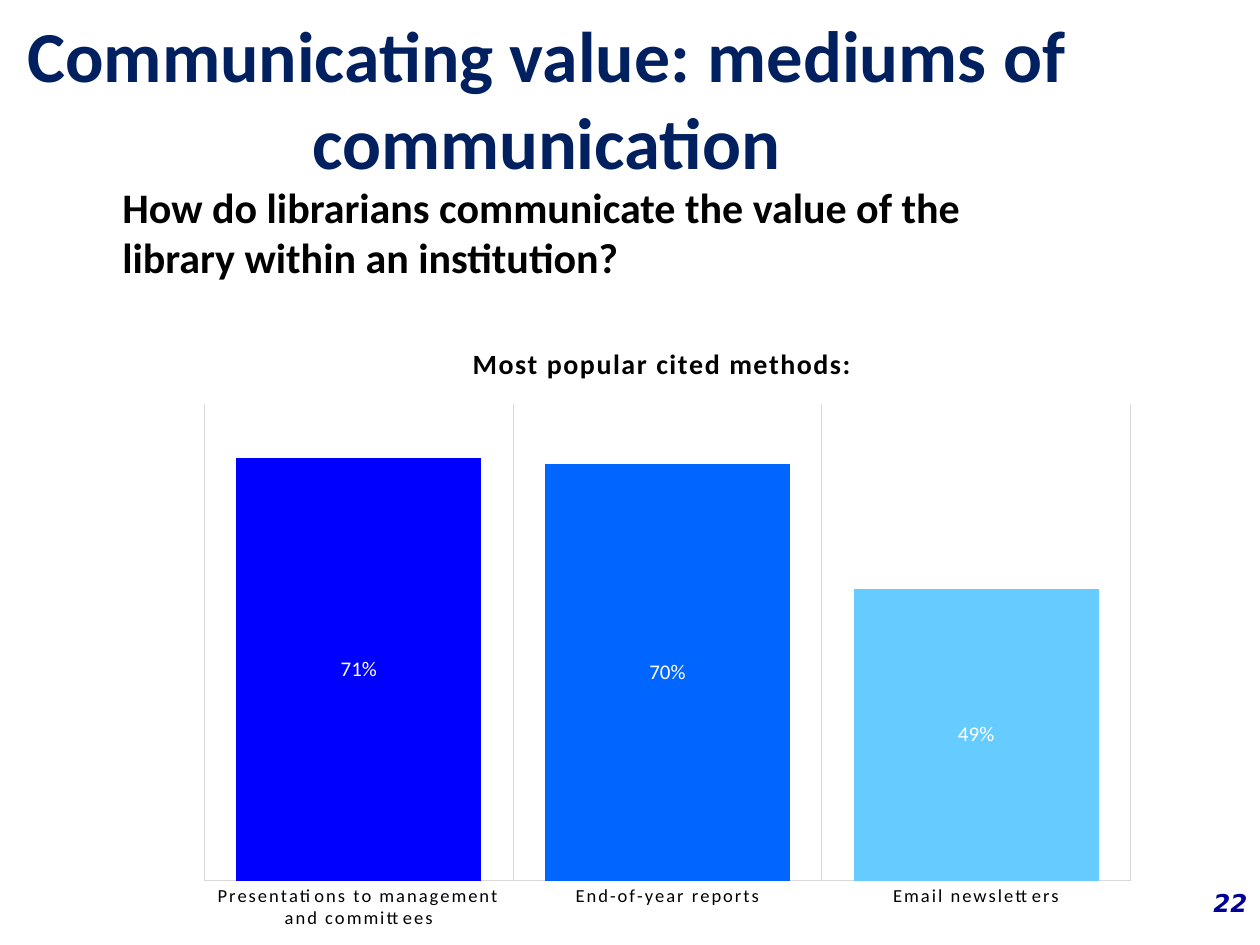
from dataclasses import dataclass

from lxml import etree
from pptx import Presentation
from pptx.chart.data import CategoryChartData
from pptx.dml.color import RGBColor
from pptx.enum import chart as ch, text as tx
from pptx.oxml.ns import qn
from pptx.util import Emu, Pt

NAVY = RGBColor(0x00, 0x20, 0x60)
INDIGO = RGBColor(0x00, 0x00, 0x99)
BLACK = RGBColor(0x00, 0x00, 0x00)
WHITE = RGBColor(0xFF, 0xFF, 0xFF)
GREY = RGBColor(0xD9, 0xD9, 0xD9)
BLUE = RGBColor(0x00, 0x00, 0xFF)
AZURE = RGBColor(0x00, 0x66, 0xFF)
SKY = RGBColor(0x66, 0xCC, 0xFF)
TEAL = RGBColor(0x00, 0xCC, 0x99)


@dataclass
class Label:
    box: tuple[int, int, int, int]
    runs: list[tuple[str, float]]
    color: RGBColor
    font: str = "Calibri"
    align: tx.PP_ALIGN = tx.PP_ALIGN.LEFT
    anchor: tx.MSO_ANCHOR = tx.MSO_ANCHOR.TOP
    italic: bool = False


@dataclass
class Bar:
    name: str
    value: float
    color: RGBColor


LABELS = [
    Label((1186, 882, 74, 63), [("22", 14)], INDIGO, "DejaVu Sans",
          tx.PP_ALIGN.RIGHT, italic=True),
    Label((-54, 33, 1201, 128),
          [("Communicating value: ", 41), ("mediums of communication", 41.5)],
          NAVY, align=tx.PP_ALIGN.CENTER, anchor=tx.MSO_ANCHOR.MIDDLE),
    Label((110, 175, 963, 115),
          [("How do librarians communicate the value of the library "
            "within an institution?", 24)], BLACK),
]
BARS = [
    Bar("Presentations to management and committees", 0.71, BLUE),
    Bar("End-of-year reports", 0.70, AZURE),
    Bar("Email newsletters", 0.49, SKY),
]


def px(n: int) -> Emu:
    return Emu(round(n * 914400 / 126))


def style(font, size: float, color: RGBColor, bold: bool = False) -> None:
    font.name = "Calibri"
    font.size = Pt(size)
    font.bold = bold
    font.color.rgb = color


def add_label(slide, label: Label) -> None:
    frame = slide.shapes.add_textbox(*map(px, label.box)).text_frame
    frame.word_wrap = True
    frame.vertical_anchor = label.anchor
    para = frame.paragraphs[0]
    para.alignment = label.align
    style(para.font, label.runs[0][1], label.color, True)
    para.font.name = label.font
    para.font.italic = label.italic
    for words, size in label.runs:
        run = para.add_run()
        run.text = words
        run.font.size = Pt(size)


def place(parent, index: int, **sides: float) -> None:
    """Give a chart part a manual layout, as fractions of the chart."""
    for old in parent.findall(qn("c:layout")):
        parent.remove(old)
    layout = etree.Element(qn("c:layout"))
    manual = etree.SubElement(layout, qn("c:manualLayout"))
    if "w" in sides:
        etree.SubElement(manual, qn("c:layoutTarget")).set("val", "inner")
    for side in "xy":
        etree.SubElement(manual, qn(f"c:{side}Mode")).set("val", "edge")
    for side, value in sides.items():
        etree.SubElement(manual, qn(f"c:{side}")).set("val", str(value))
    parent.insert(index, layout)


def space_out(props, spacing: int) -> None:
    """Set letter spacing in hundredths of a point."""
    props.set("spc", str(spacing))


def add_bars(slide, bars: list[Bar]) -> None:
    data = CategoryChartData(number_format="0%")
    data.categories = [bar.name for bar in bars]
    data.add_series("Series 1", [bar.value for bar in bars])
    chart = slide.shapes.add_chart(
        ch.XL_CHART_TYPE.COLUMN_STACKED,
        *map(px, (154, 316, 1012, 614)), data).chart
    style(chart.font, 10, BLACK)
    chart.has_legend = False

    chart.has_title = True
    title = chart.chart_title
    para = title.text_frame.paragraphs[0]
    run = para.add_run()
    run.text = "Most popular cited methods:"
    style(run.font, 16, BLACK, True)
    space_out(run._r.get_or_add_rPr(), 100)
    title.include_in_layout = False
    place(title._element, 1, x=0.31, y=0.04)
    place(chart._chartSpace.chart.plotArea, 0, x=0.05, y=0.145, w=0.915, h=0.78)

    cats = chart.category_axis
    cats.major_tick_mark = ch.XL_TICK_MARK.NONE
    cats.has_major_gridlines = True
    for line in (cats.format.line, cats.major_gridlines.format.line):
        line.color.rgb = GREY
        line.width = Pt(0.75)
    style(cats.tick_labels.font, 10.6, BLACK)
    space_out(cats.tick_labels.font._element, 120)

    axis = chart.value_axis
    axis.minimum_scale, axis.maximum_scale = 0, 0.8
    axis.has_major_gridlines = False
    axis.tick_labels.number_format = "0%"
    axis.tick_labels.number_format_is_linked = False
    axis.visible = False

    plot = chart.plots[0]
    plot.gap_width, plot.overlap = 26, 100
    plot.vary_by_categories = False
    series = plot.series[0]
    series.format.fill.solid()
    series.format.fill.fore_color.rgb = TEAL
    for i, bar in enumerate(bars):
        fill = series.points[i].format.fill
        fill.solid()
        fill.fore_color.rgb = bar.color
    marks = series.data_labels
    marks.show_value = True
    marks.position = ch.XL_LABEL_POSITION.CENTER
    marks.number_format = "0%"
    marks.number_format_is_linked = False
    style(marks.font, 12, WHITE)


def main() -> None:
    deck = Presentation()
    deck.slide_width, deck.slide_height = px(1260), px(945)
    slide = deck.slides.add_slide(deck.slide_layouts[6])
    for label in LABELS:
        add_label(slide, label)
    add_bars(slide, BARS)
    deck.save("out.pptx")


if __name__ == "__main__":
    main()
